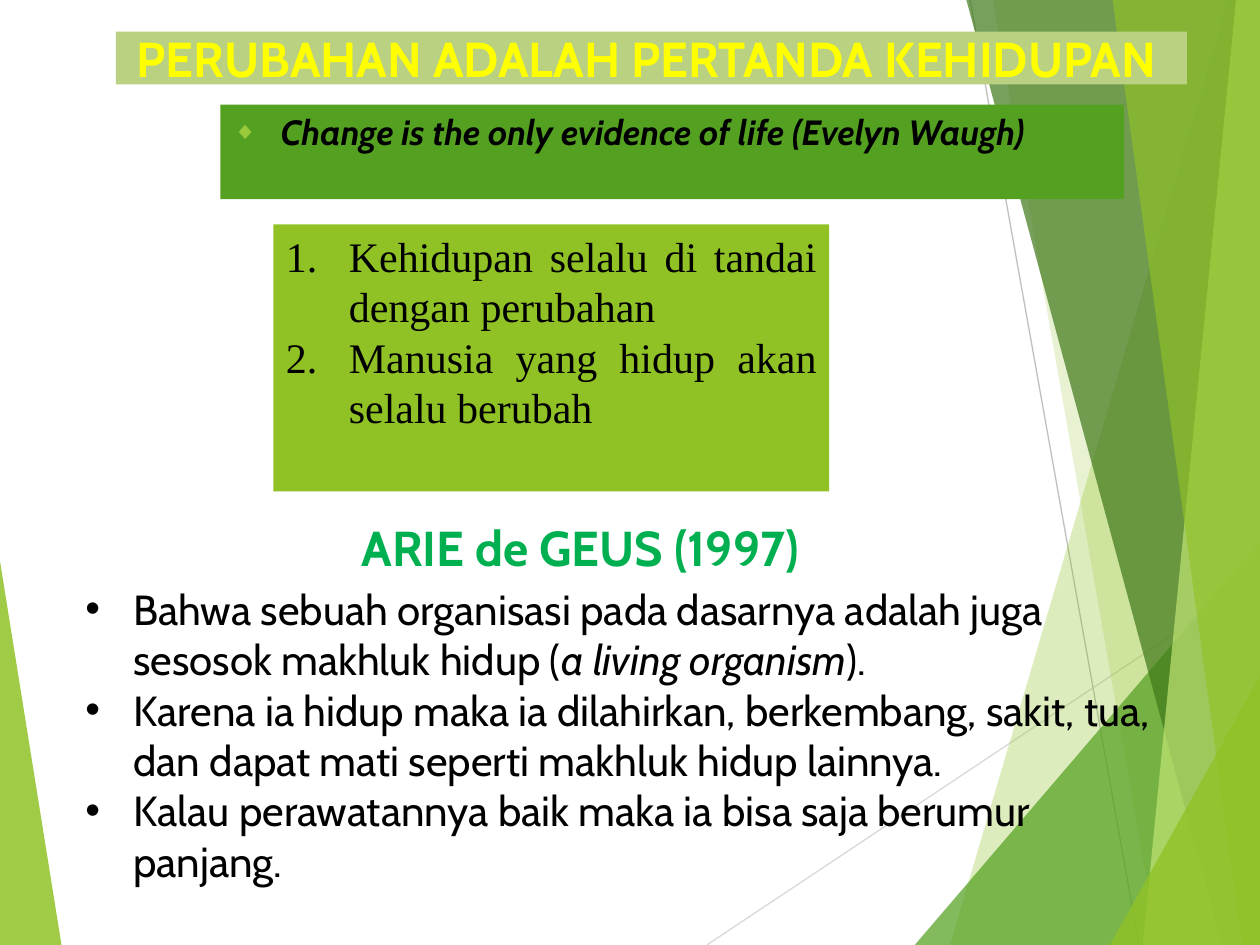
from dataclasses import dataclass

from lxml import etree
from pptx import Presentation
from pptx.dml.color import RGBColor
from pptx.enum.shapes import MSO_CONNECTOR, MSO_SHAPE
from pptx.enum.text import MSO_ANCHOR, PP_ALIGN
from pptx.oxml.ns import qn
from pptx.util import Inches, Pt


@dataclass(frozen=True)
class Theme:
    lime: str = "90C226"
    green: str = "54A021"
    forest: str = "3F7819"
    pale_lime: str = "C0E474"
    banner: str = "B9D181"
    diamond: str = "99CA3C"
    yellow: str = "FFFF00"
    emerald: str = "00B050"
    ink: str = "000000"
    silver: str = "D9D9D9"
    grey: str = "BFBFBF"
    sans: str = "Cabin"
    serif: str = "Times New Roman"
    heading: int = 28
    body: int = 24
    quote: int = 20


class SlideBuilder:
    def __init__(self, slide, theme):
        self.shapes = slide.shapes
        self.theme = theme

    def facet(self, points, color, opacity):
        """Draw a translucent polygon; opacity is in percent."""
        start, *rest = [(Inches(x), Inches(y)) for x, y in points]
        outline = self.shapes.build_freeform(*start)
        outline.add_line_segments(rest, close=True)
        facet = outline.convert_to_shape()
        self._paint(facet, color)
        fill_color = facet._element.spPr.find(qn("a:solidFill"))[0]
        etree.SubElement(fill_color, qn("a:alpha"), val=str(opacity * 1000))

    def hairline(self, start, end, color):
        line = self.shapes.add_connector(
            MSO_CONNECTOR.STRAIGHT, *map(Inches, start + end))
        line.line.color.rgb = RGBColor.from_string(color)
        line.line.width = Pt(0.75)
        etree.SubElement(line._element.spPr, qn("a:effectLst"))

    def panel(self, box, color, anchor=MSO_ANCHOR.TOP):
        """Add a filled rectangle and return its text frame."""
        panel = self.shapes.add_shape(MSO_SHAPE.RECTANGLE, *map(Inches, box))
        self._paint(panel, color)
        return self._prepare(panel.text_frame, anchor)

    def text_box(self, box):
        return self._prepare(
            self.shapes.add_textbox(*map(Inches, box)).text_frame)

    def add_text(self, frame, paragraphs, size, color, font=None, bold=False,
                 italic=False, align=PP_ALIGN.LEFT):
        """Fill a frame; each paragraph is a list of parts, odd ones italic."""
        for index, parts in enumerate(paragraphs):
            paragraph = frame.paragraphs[0] if index == 0 else frame.add_paragraph()
            paragraph.alignment = align
            for position, part in enumerate(parts):
                run = paragraph.add_run()
                run.text = part
                run.font.name = font or self.theme.sans
                run.font.size = Pt(size)
                run.font.bold = bold
                run.font.italic = italic or position % 2 == 1
                run.font.color.rgb = RGBColor.from_string(color)

    def bullets(self, frame, indent, char=None, color=None, percent=None):
        """Give every paragraph a hanging bullet, or a number without char."""
        for paragraph in frame.paragraphs:
            props = paragraph._p.get_or_add_pPr()
            props.set("marL", str(Inches(indent)))
            props.set("indent", str(-Inches(indent)))
            if color:
                holder = etree.SubElement(props, qn("a:buClr"))
                etree.SubElement(holder, qn("a:srgbClr"), val=color)
            if percent:
                etree.SubElement(props, qn("a:buSzPct"), val=str(percent * 1000))
            if char:
                etree.SubElement(props, qn("a:buFont"), typeface="Arial")
                etree.SubElement(props, qn("a:buChar"), char=char)
            else:
                etree.SubElement(props, qn("a:buAutoNum"), type="arabicPeriod")

    def _paint(self, shape, color):
        shape.shadow.inherit = False
        shape.fill.solid()
        shape.fill.fore_color.rgb = RGBColor.from_string(color)
        shape.line.fill.background()

    def _prepare(self, frame, anchor=MSO_ANCHOR.TOP):
        frame.word_wrap = True
        frame.vertical_anchor = anchor
        return frame


def draw_backdrop(builder):
    theme = builder.theme
    right, bottom = 10.01, 7.5
    builder.facet([(-0.01, 4.39), (0.49, 7.51), (-0.01, bottom)], theme.lime, 85)
    builder.hairline((5.61, bottom), (right, 4.57), theme.silver)
    builder.hairline((7.7, 0), (9.04, bottom), theme.grey)
    # Each facet runs from its top edge to its bottom edge along the right side.
    facets = [
        (9.75, 0, 7.54, theme.lime, 30),
        (7.88, 0, 9.19, theme.lime, 20),
        (None, 4.29, 7.26, theme.green, 72),
        (7.67, 0, 9.7, theme.forest, 70),
        (9.81, 0, 9.07, theme.pale_lime, 70),
        (8.83, 0, 9.86, theme.lime, 65),
        (None, 5.35, 8.81, theme.lime, 80),
    ]
    for top_x, top_y, bottom_x, color, opacity in facets:
        points = [(bottom_x, bottom), (right, bottom), (right, top_y)]
        if top_x is not None:
            points.append((top_x, top_y))
        builder.facet(points, color, opacity)


def draw_content(builder):
    theme = builder.theme
    banner = builder.panel((0.92, 0.25, 8.5, 0.42), theme.banner, MSO_ANCHOR.MIDDLE)
    builder.add_text(banner, [["PERUBAHAN ADALAH PERTANDA KEHIDUPAN "]],
                     theme.heading, theme.yellow, bold=True, align=PP_ALIGN.CENTER)

    quote = builder.panel((1.75, 0.83, 7.17, 0.75), theme.green)
    builder.add_text(quote, [["Change is the only evidence of life (Evelyn Waugh)"]],
                     theme.quote, theme.ink, bold=True, italic=True)
    quote.paragraphs[0].space_before = Pt(4)
    builder.bullets(quote, 0.38, "◆", theme.diamond, 70)

    premises = builder.panel((2.17, 1.78, 4.41, 2.12), theme.lime)
    builder.add_text(premises, [
        ["Kehidupan selalu di tandai dengan perubahan"],
        ["Manusia yang hidup akan selalu berubah"],
    ], theme.body, theme.ink, font=theme.serif, align=PP_ALIGN.JUSTIFY)
    builder.bullets(premises, 0.5)

    arguments = builder.text_box((0.58, 4.58, 8.92, 2.67))
    builder.add_text(arguments, [
        ["Bahwa sebuah organisasi pada dasarnya adalah juga sesosok makhluk hidup (",
         "a living organism", ")."],
        ["Karena ia hidup maka ia dilahirkan, berkembang, sakit, tua, "
         "dan dapat mati seperti makhluk hidup lainnya."],
        ["Kalau perawatannya baik maka ia bisa saja berumur panjang."],
    ], theme.body, theme.ink)
    builder.bullets(arguments, 0.38, "•")

    author = builder.text_box((2.77, 4.06, 4.75, 0.95))
    builder.add_text(author, [["ARIE de GEUS (1997)"]],
                     theme.heading, theme.emerald, bold=True)


def main():
    presentation = Presentation()
    presentation.slide_width = Inches(10)
    presentation.slide_height = Inches(7.5)
    slide = presentation.slides.add_slide(presentation.slide_layouts[6])
    builder = SlideBuilder(slide, Theme())
    draw_backdrop(builder)
    draw_content(builder)
    presentation.save("out.pptx")


if __name__ == "__main__":
    main()
